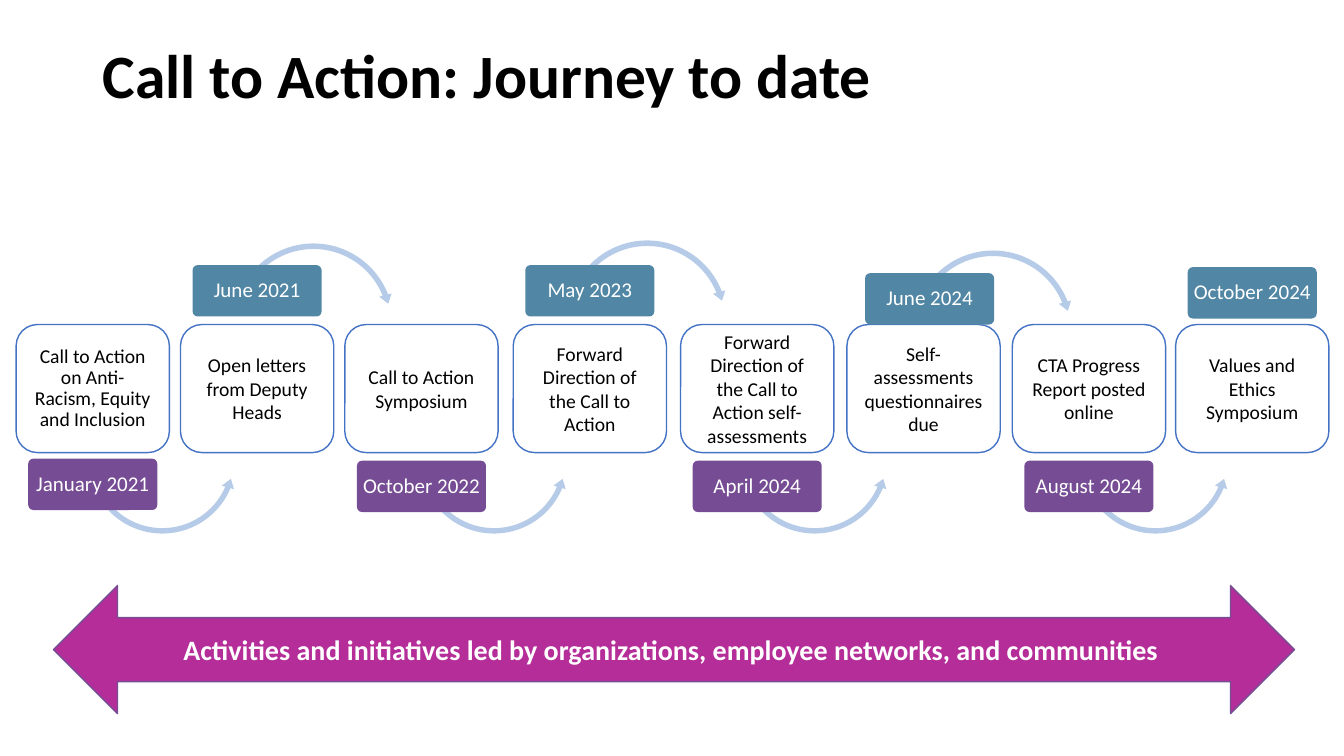
from collections import namedtuple
from dataclasses import dataclass

from pptx import Presentation
from pptx.dml.color import RGBColor
from pptx.enum.shapes import MSO_SHAPE
from pptx.enum.text import MSO_ANCHOR, PP_ALIGN
from pptx.util import Emu, Pt

ROUNDED = MSO_SHAPE.ROUNDED_RECTANGLE
ARC_OVER = MSO_SHAPE.CIRCULAR_ARROW
ARC_UNDER = MSO_SHAPE.LEFT_CIRCULAR_ARROW
DOUBLE_ARROW = MSO_SHAPE.LEFT_RIGHT_ARROW
TOP, MIDDLE = MSO_ANCHOR.TOP, MSO_ANCHOR.MIDDLE
LEFT, CENTER = PP_ALIGN.LEFT, PP_ALIGN.CENTER

EMU_PER_PX = 9144
SLIDE_SIZE = (1333, 750)
CARD_SIZE = (152, 127)
TAG_SIZE = (128, 51)
OVER_SIZE = 166
UNDER_SIZE = 154
OVER_ADJUSTMENTS = (0.033, 4.025, 203.063, 134.598, 0.038)
UNDER_ADJUSTMENTS = (0.035, 4.356, 13.766, 81.9, 0.041)


@dataclass(frozen=True)
class Theme:
    font: str = "Calibri"
    black: str = "000000"
    white: str = "FFFFFF"
    card_line: str = "4472C4"
    over_tag: str = "5186A5"
    under_tag: str = "764D94"
    arc: str = "B5CBE7"
    banner: str = "B52D98"
    title_size: int = 44
    card_size: int = 14
    tag_size: int = 15
    banner_size: int = 20


THEME = Theme()
Box = namedtuple("Box", "x y w h")
Milestone = namedtuple("Milestone", "event date x tag_dx tag_dy arc_dx arc_dy spacing")

MILESTONES = [
    Milestone("Call to Action on Anti-Racism, Equity and Inclusion", "January 2021",
              16, 12, 133, 68, 57, 0.9),
    Milestone("Open letters from Deputy Heads", "June 2021", 179, 12, -59, 49, -84, 1),
    Milestone("Call to Action Symposium", "October 2022", 342, 12, 135, 71, 57, 1),
    Milestone("Forward Direction of the Call to Action", "May 2023", 509, 12, -59, 50, -87, 1),
    Milestone("Forward Direction of the Call to Action self-assessments", "April 2024",
              675, 12, 135, 56, 57, 1),
    Milestone("Self-assessments questionnaires due", "June 2024", 840, 18, -51, 62, -77, 1),
    Milestone("CTA Progress Report posted online", "August 2024", 1004, 12, 135, 65, 57, 1),
    Milestone("Values and Ethics Symposium", "October 2024", 1166, 12, -57, None, None, 1),
]


def emu(box):
    return [Emu(length * EMU_PER_PX) for length in box]


def write(shape, text, *, size, color, bold=False, align=CENTER, anchor=MIDDLE,
          spacing=1, margins=(10, 5)):
    frame = shape.text_frame
    frame.word_wrap = True
    frame.vertical_anchor = anchor
    side, edge = emu(margins)
    frame.margin_left = frame.margin_right = side
    frame.margin_top = frame.margin_bottom = edge
    paragraph = frame.paragraphs[0]
    paragraph.alignment = align
    paragraph.line_spacing = spacing
    run = paragraph.add_run()
    run.text = text
    run.font.name = THEME.font
    run.font.size = Pt(size)
    run.font.bold = bold
    run.font.color.rgb = RGBColor.from_string(color)


def draw(slide, kind, box, fill, line=None, adjustments=()):
    shape = slide.shapes.add_shape(kind, *emu(box))
    shape.shadow.inherit = False
    shape.fill.solid()
    shape.fill.fore_color.rgb = RGBColor.from_string(fill)
    if line:
        shape.line.color.rgb = RGBColor.from_string(line)
        shape.line.width = Pt(1)
    else:
        shape.line.fill.background()
    for index, value in enumerate(adjustments):
        shape.adjustments[index] = value
    return shape


def add_title(slide, box):
    title = slide.shapes.add_textbox(*emu(box))
    write(title, "Call to Action: Journey to date", size=THEME.title_size,
          color=THEME.black, bold=True, align=LEFT, anchor=TOP, spacing=0.9)


def add_arc(slide, milestone, row):
    if milestone.arc_dx is None:
        return
    over = milestone.tag_dy < 0
    size = OVER_SIZE if over else UNDER_SIZE
    box = Box(row.x + milestone.x + milestone.arc_dx, row.y + milestone.arc_dy, size, size)
    draw(slide, ARC_OVER if over else ARC_UNDER, box, THEME.arc,
         adjustments=OVER_ADJUSTMENTS if over else UNDER_ADJUSTMENTS)


def add_card(slide, milestone, row):
    card = draw(slide, ROUNDED, Box(row.x + milestone.x, row.y, *CARD_SIZE),
                THEME.white, THEME.card_line)
    write(card, milestone.event, size=THEME.card_size, color=THEME.black,
          spacing=milestone.spacing)


def add_tag(slide, milestone, row):
    fill = THEME.over_tag if milestone.tag_dy < 0 else THEME.under_tag
    box = Box(row.x + milestone.x + milestone.tag_dx, row.y + milestone.tag_dy, *TAG_SIZE)
    tag = draw(slide, ROUNDED, box, fill, adjustments=(0.1,))
    write(tag, milestone.date, size=THEME.tag_size, color=THEME.white,
          spacing=0.9, margins=(3, 2))


def add_timeline(slide, row):
    for add_part in (add_arc, add_card, add_tag):
        for milestone in MILESTONES:
            add_part(slide, milestone, row)


def add_banner(slide, box):
    banner = draw(slide, DOUBLE_ARROW, box, THEME.banner, THEME.under_tag)
    write(banner, "Activities and initiatives led by organizations, "
          "employee networks, and communities ",
          size=THEME.banner_size, color=THEME.white, bold=True)


def main():
    deck = Presentation()
    deck.slide_width, deck.slide_height = emu(SLIDE_SIZE)
    slide = deck.slides.add_slide(deck.slide_layouts[6])
    add_title(slide, Box(92, 40, 1150, 145))
    add_timeline(slide, Box(0, 322, 1333, 127))
    add_banner(slide, Box(53, 581, 1231, 127))
    deck.save("out.pptx")


if __name__ == "__main__":
    main()
